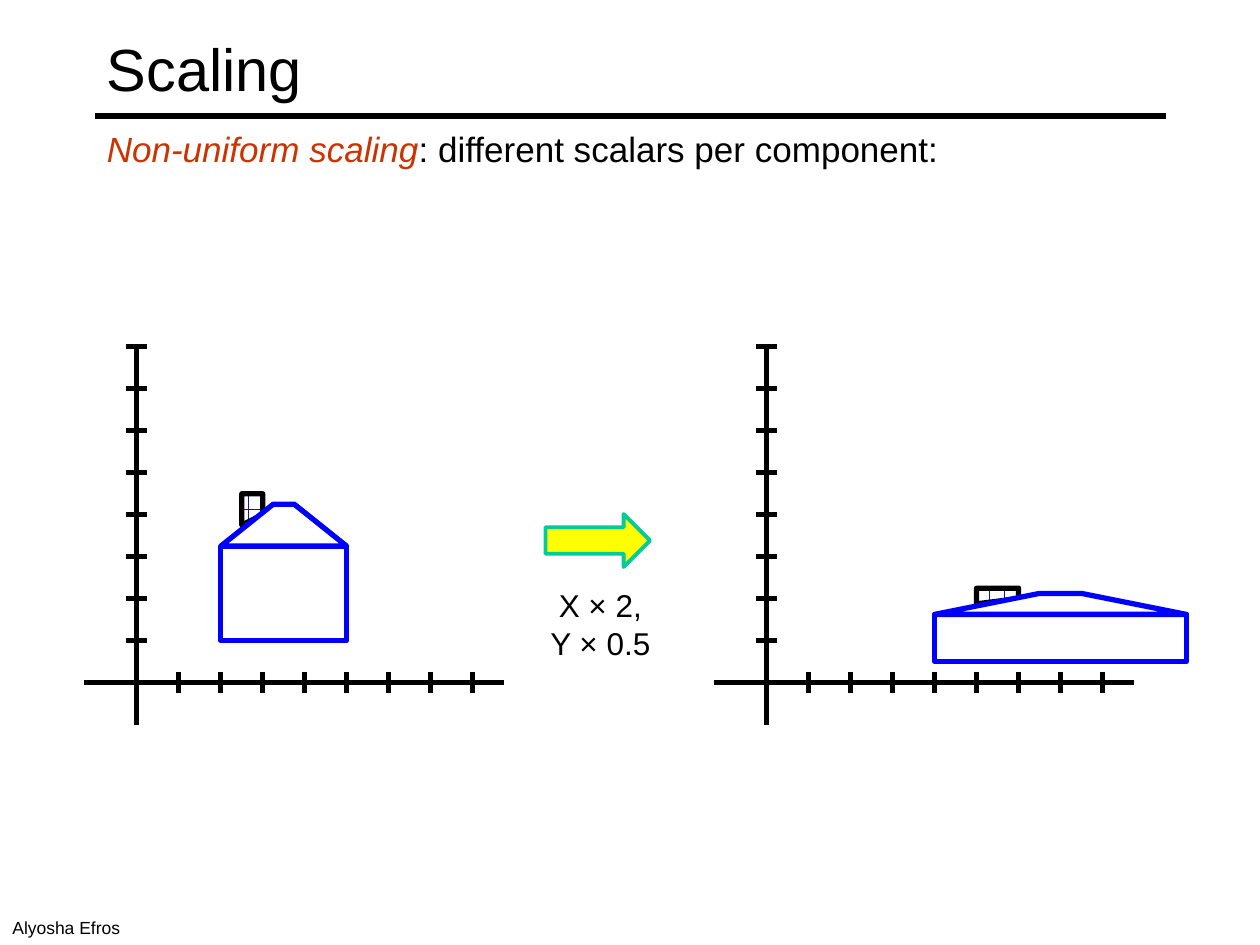
import pptx
import pptx.util
import pptx.dml.color
import pptx.enum.dml
import pptx.enum.shapes
import pptx.enum.text
import pptx.oxml.ns
from lxml import etree

Inches, Pt = pptx.util.Inches, pptx.util.Pt
RGBColor = pptx.dml.color.RGBColor
MSO_SHAPE = pptx.enum.shapes.MSO_SHAPE
MSO_ANCHOR = pptx.enum.text.MSO_ANCHOR

BLACK = RGBColor(0x00, 0x00, 0x00)
WHITE = RGBColor(0xFF, 0xFF, 0xFF)
BLUE = RGBColor(0x00, 0x00, 0xFF)
NAVY = RGBColor(0x03, 0x23, 0x89)
RED = RGBColor(0xCC, 0x33, 0x00)
YELLOW = RGBColor(0xFF, 0xFF, 0x00)
TEAL = RGBColor(0x00, 0xCC, 0x99)

TICKS = 8
WALLS = [(2, 1), (5, 3.25)]
ROOF = [(2, 3.25), (3.25, 4.25), (3.75, 4.25), (5, 3.25)]
CHIMNEY = [(2.5, 3.75), (2.5, 4.5), (3, 4.5), (3, 4)]


def add_line(s, x1, y1, x2, y2):
    """Draw a plain black 3 pt line."""
    line = s.shapes.add_connector(
        pptx.enum.shapes.MSO_CONNECTOR.STRAIGHT, int(x1), int(y1), int(x2), int(y2))
    line.line.color.rgb = BLACK
    line.line.width = Pt(3)
    etree.SubElement(line._element.spPr, pptx.oxml.ns.qn("a:effectLst"))


def style_shape(sp, fill, color, width=3):
    """Give a shape a solid fill and an outline, without shadow."""
    sp.shadow.inherit = False
    sp.fill.solid()
    sp.fill.fore_color.rgb = fill
    sp.line.color.rgb = color
    sp.line.width = Pt(width)


def add_text(s, box, size, runs, anchor=MSO_ANCHOR.TOP, wrap=True):
    """Place one paragraph made of (text, color, italic) runs and return it."""
    tf = s.shapes.add_textbox(*box).text_frame
    tf.word_wrap = wrap
    tf.vertical_anchor = anchor
    p = tf.paragraphs[0]
    p.font.name = "Arial"
    p.font.size = Pt(size)
    for i, (text, color, italic) in enumerate(runs):
        if i or text.startswith("\n"):
            pass
        for j, part in enumerate(text.split("\n")):
            if j:
                p.add_line_break()
            r = p.add_run()
            r.text = part
            r.font.color.rgb = color
            r.font.italic = italic
    return p


def add_header(s, left, top, width, height):
    """Place the title and the rule below it."""
    add_text(s, (left, top, width, height), 34, [("Scaling", BLACK, False)], MSO_ANCHOR.MIDDLE)
    rule_y = top + height - Inches(0.08)
    add_line(s, left, rule_y, left + width, rule_y)


def add_body(s, left, top, width, height):
    """Place the definition with its hanging indent."""
    p = add_text(s, (left, top, width, height), 20, [
        ("Non-uniform scaling", RED, True),
        (": different scalars per component:", BLACK, False)])
    p.line_spacing = 0.9
    p.space_before = Pt(4)
    pPr = p._p.get_or_add_pPr()
    pPr.set("marL", str(Inches(0.38)))
    pPr.set("indent", str(-Inches(0.38)))


def add_polygon(s, points):
    """Draw a closed outline through slide points."""
    builder = s.shapes.build_freeform(*points[0])
    builder.add_line_segments(points[1:], close=True)
    return builder.convert_to_shape()


def add_plot(s, left, top, width, height, scale_x=1, scale_y=1):
    """Draw ticked axes and the house scaled about their origin."""
    unit = width / 10
    x0, y0 = left + 1.25 * unit, top + height - unit
    tick = unit / 4

    def at(point):
        """Turn house coordinates into a slide point."""
        x, y = point
        return round(x0 + x * scale_x * unit), round(y0 - y * scale_y * unit)

    add_line(s, x0, top, x0, top + height)
    add_line(s, left, y0, left + width, y0)
    for i in range(1, TICKS + 1):
        x, y = x0 + i * unit, y0 - i * unit
        add_line(s, x, y0 - tick, x, y0 + tick)
        add_line(s, x0 - tick, y, x0 + tick, y)

    chimney = add_polygon(s, [at(point) for point in CHIMNEY])
    style_shape(chimney, WHITE, BLACK)
    chimney.fill.patterned()
    chimney.fill.pattern = pptx.enum.dml.MSO_PATTERN.HORIZONTAL_BRICK
    chimney.fill.fore_color.rgb = NAVY
    chimney.fill.back_color.rgb = WHITE

    (x1, y1), (x2, y2) = map(at, WALLS)
    walls = s.shapes.add_shape(MSO_SHAPE.RECTANGLE, x1, y2, x2 - x1, y1 - y2)
    style_shape(walls, WHITE, BLUE)
    style_shape(add_polygon(s, [at(point) for point in ROOF]), WHITE, BLUE)


def add_step(s, left, top, width, height):
    """Place the arrow with the scale factors below it."""
    arrow_height = Inches(0.42)
    arrow = s.shapes.add_shape(
        MSO_SHAPE.RIGHT_ARROW, left + Inches(0.1), top, Inches(0.83), arrow_height)
    style_shape(arrow, YELLOW, TEAL, 2.25)
    box = (left, top + arrow_height, width, height - arrow_height)
    p = add_text(s, box, 18, [("X × 2,\nY × 0.5", BLACK, False)], MSO_ANCHOR.MIDDLE, False)
    p.alignment = pptx.enum.text.PP_ALIGN.CENTER


def add_credit(s, left, top, width, height):
    """Place the author line."""
    add_text(s, (left, top, width, height), 10, [("Alyosha Efros", BLACK, False)])


def main():
    """Build and save the slide."""
    prs = pptx.Presentation()
    prs.slide_width, prs.slide_height = Inches(10), Inches(7.5)
    s = prs.slides.add_slide(prs.slide_layouts[6])
    add_header(s, Inches(0.75), Inches(0.08), Inches(8.5), Inches(0.92))
    add_body(s, Inches(0.75), Inches(1), Inches(8.5), Inches(5.75))
    add_plot(s, Inches(0.67), Inches(2.75), Inches(3.33), Inches(3))
    add_plot(s, Inches(5.67), Inches(2.75), Inches(3.33), Inches(3), 2, 0.5)
    add_step(s, Inches(4.23), Inches(4.08), Inches(1.07), Inches(1.32))
    add_credit(s, Inches(0), Inches(7.23), Inches(3.38), Inches(0.27))
    prs.save("out.pptx")


if __name__ == "__main__":
    main()
